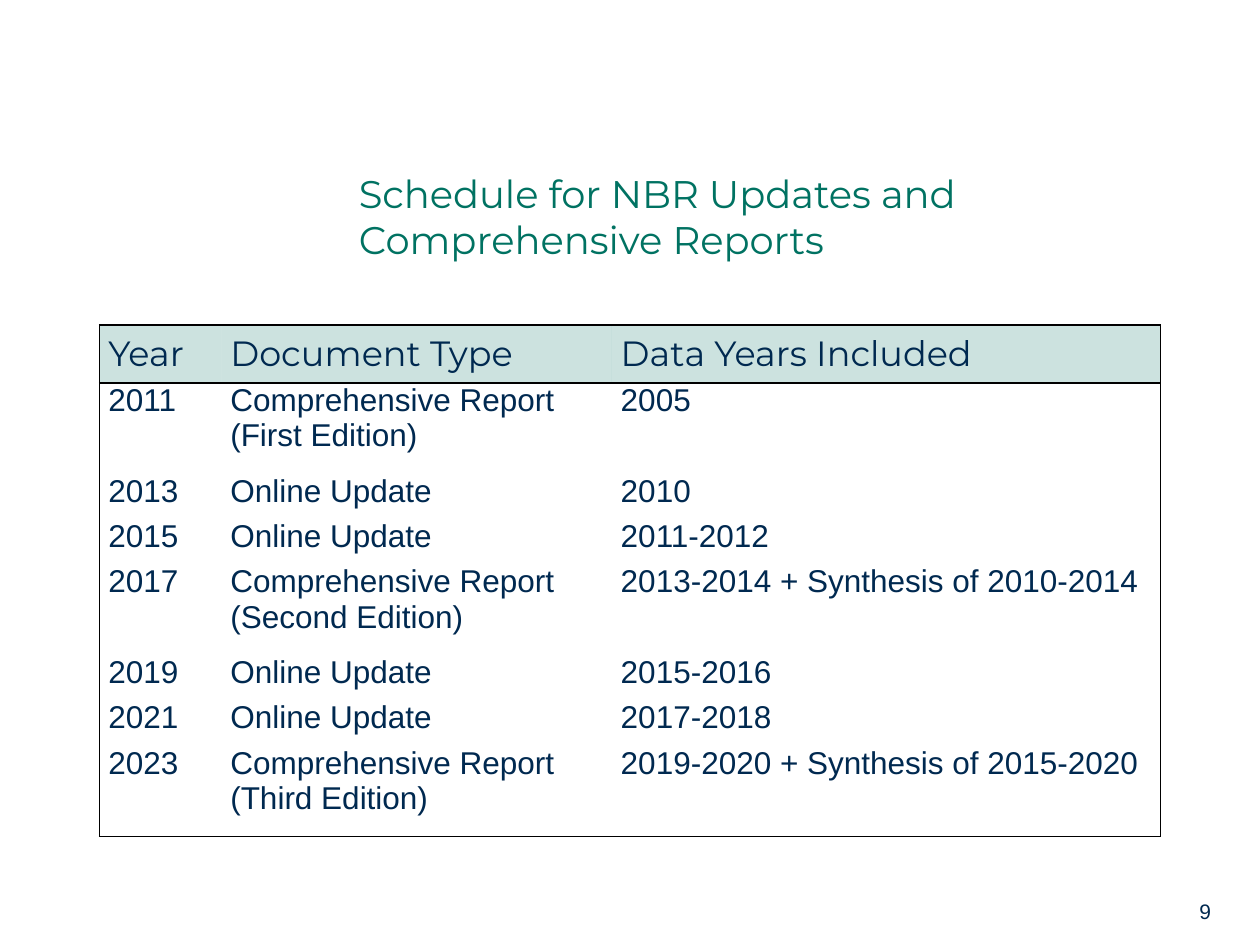
"""Build the slide with the schedule of NBR updates and comprehensive reports."""
from dataclasses import dataclass
from typing import NamedTuple

from lxml.etree import SubElement
from pptx import Presentation
from pptx.dml.color import RGBColor
from pptx.enum.text import MSO_ANCHOR
from pptx.oxml.ns import qn
from pptx.slide import Slide
from pptx.table import _Cell
from pptx.text.text import TextFrame
from pptx.util import Inches, Pt

SLIDE_WIDTH, SLIDE_HEIGHT = Inches(10), Inches(7.5)


class TextStyle(NamedTuple):
    font: str
    size: int
    color: str


@dataclass(frozen=True)
class Theme:
    title: TextStyle = TextStyle("Montserrat", 22, "007262")
    header: TextStyle = TextStyle("Montserrat", 20, "002950")
    body: TextStyle = TextStyle("Arial", 18, "002950")
    page: TextStyle = TextStyle("Arial", 12, "002950")
    header_fill: str = "007262"
    header_opacity: int = 20
    border: str = "000000"
    border_width: int = 1


class Area(NamedTuple):
    left: float
    top: float
    width: float
    height: float

    def lengths(self) -> tuple[int, int, int, int]:
        return (int(self.left * SLIDE_WIDTH), int(self.top * SLIDE_HEIGHT),
                int(self.width * SLIDE_WIDTH), int(self.height * SLIDE_HEIGHT))


class Release(NamedTuple):
    year: str
    document: str
    data_years: str
    lines: int = 1


THEME = Theme()
TITLE_AREA = Area(0.275, 0.167, 0.658, 0.123)
SCHEDULE_AREA = Area(0.079, 0.344, 0.842, 0.544)
PAGE_AREA = Area(0.942, 0.944, 0.083, 0.04)
COLUMN_SHARES = (0.115, 0.368, 0.517)
HEADER_HEIGHT, LINE_HEIGHT = Inches(0.46), Inches(0.36)
CELL_INSET = Inches(0.07)

HEADINGS = Release("Year", "Document Type", "Data Years Included")
RELEASES = (
    Release("2011", "Comprehensive Report (First Edition)", "2005", 2),
    Release("2013", "Online Update", "2010"),
    Release("2015", "Online Update", "2011-2012"),
    Release("2017", "Comprehensive Report (Second Edition)", "2013-2014 + Synthesis of 2010-2014", 2),
    Release("2019", "Online Update", "2015-2016"),
    Release("2021", "Online Update", "2017-2018"),
    Release("2023", "Comprehensive Report (Third Edition)", "2019-2020 + Synthesis of 2015-2020", 2),
)


def write(frame: TextFrame, text: str, style: TextStyle) -> None:
    frame.word_wrap = True
    frame.text = text
    font = frame.paragraphs[0].font
    font.name, font.size = style.font, Pt(style.size)
    font.color.rgb = RGBColor.from_string(style.color)


def add_text(slide: Slide, area: Area, text: str, style: TextStyle, anchor: MSO_ANCHOR) -> None:
    frame = slide.shapes.add_textbox(*area.lengths()).text_frame
    frame.vertical_anchor = anchor
    write(frame, text, style)


def set_borders(cell: _Cell, sides: dict[str, bool]) -> None:
    properties = cell._tc.get_or_add_tcPr()
    for side, visible in sides.items():
        line = SubElement(properties, qn(f"a:ln{side}"), w=str(Pt(THEME.border_width)))
        if visible:
            fill = SubElement(line, qn("a:solidFill"))
            SubElement(fill, qn("a:srgbClr"), val=THEME.border)
        else:
            SubElement(line, qn("a:noFill"))


def fill_header(cell: _Cell) -> None:
    cell.fill.solid()
    cell.fill.fore_color.rgb = RGBColor.from_string(THEME.header_fill)
    color = cell._tc.tcPr.find(f"{qn('a:solidFill')}/{qn('a:srgbClr')}")
    SubElement(color, qn("a:alpha"), val=str(THEME.header_opacity * 1000))


def add_schedule(slide: Slide) -> None:
    entries = (HEADINGS, *RELEASES)
    last_row, last_column = len(entries) - 1, len(COLUMN_SHARES) - 1
    area = SCHEDULE_AREA.lengths()
    schedule = slide.shapes.add_table(len(entries), len(COLUMN_SHARES), *area).table
    schedule.first_row = schedule.horz_banding = False
    for column, share in zip(schedule.columns, COLUMN_SHARES):
        column.width = int(area[2] * share)
    for row, entry in enumerate(entries):
        is_header = row == 0
        schedule.rows[row].height = HEADER_HEIGHT if is_header else entry.lines * LINE_HEIGHT
        for column, text in enumerate((entry.year, entry.document, entry.data_years)):
            cell = schedule.cell(row, column)
            cell.margin_left = cell.margin_right = CELL_INSET
            cell.margin_top = cell.margin_bottom = 0
            cell.vertical_anchor = MSO_ANCHOR.MIDDLE if is_header else MSO_ANCHOR.TOP
            write(cell.text_frame, text, THEME.header if is_header else THEME.body)
            set_borders(cell, {"L": column == 0, "R": column == last_column,
                               "T": row <= 1, "B": row in (0, last_row)})
            if is_header:
                fill_header(cell)
            else:
                cell.fill.background()


def main() -> None:
    deck = Presentation()
    deck.slide_width, deck.slide_height = SLIDE_WIDTH, SLIDE_HEIGHT
    slide = deck.slides.add_slide(deck.slide_layouts[6])
    add_text(slide, PAGE_AREA, "9", THEME.page, MSO_ANCHOR.TOP)
    add_text(slide, TITLE_AREA, "Schedule for NBR Updates and Comprehensive Reports",
             THEME.title, MSO_ANCHOR.MIDDLE)
    add_schedule(slide)
    deck.save("out.pptx")


if __name__ == "__main__":
    main()
